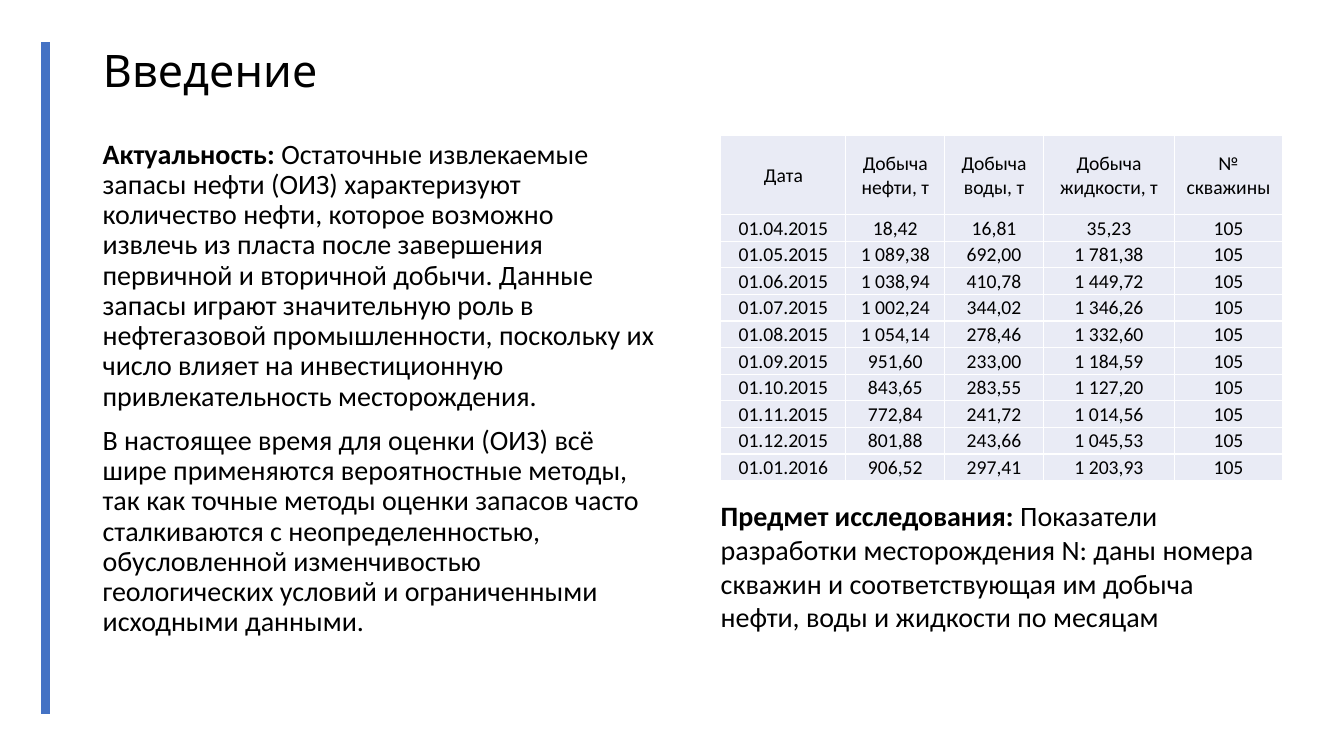
import pptx
import pptx.dml.color
import pptx.enum.shapes
import pptx.enum.text
import pptx.oxml
import pptx.oxml.ns
import pptx.util

SCALE = 9144
COLORS = {"text": "000000", "accent": "4472C4", "cell": "E9EBF5", "border": "FFFFFF"}
BODY_FONT = {"name": "Calibri", "size": pptx.util.Pt(20)}
TITLE_FONT = {"name": "League Spartan", "size": pptx.util.Pt(32), "bold": False}
CELL_FONT = {"name": "Calibri", "size": pptx.util.Pt(14), "bold": False}
CELL_FORMAT = {
    "margin_left": SCALE,
    "margin_right": SCALE,
    "margin_top": SCALE,
    "margin_bottom": 0,
    "vertical_anchor": pptx.enum.text.MSO_ANCHOR.MIDDLE,
}
RELEVANCE_SPACING = {"line_spacing": 0.9, "space_before": pptx.util.Pt(10)}
SUBJECT_SPACING = {"space_before": pptx.util.Pt(6), "space_after": pptx.util.Pt(6)}

RELEVANCE = [
    (
        "Актуальность: ",
        "Остаточные извлекаемые запасы нефти (ОИЗ) характеризуют количество нефти, "
        "которое возможно извлечь из пласта после завершения первичной и вторичной добычи. "
        "Данные запасы играют значительную роль в нефтегазовой промышленности, поскольку "
        "их число влияет на инвестиционную привлекательность месторождения.",
    ),
    (
        "",
        "В настоящее время для оценки (ОИЗ) всё шире применяются вероятностные методы, "
        "так как точные методы оценки запасов часто сталкиваются с неопределенностью, "
        "обусловленной изменчивостью геологических условий и ограниченными исходными данными.",
    ),
]
SUBJECT = [
    (
        "Предмет исследования: ",
        "Показатели разработки месторождения N: даны номера скважин и соответствующая "
        "им добыча нефти, воды и жидкости по месяцам",
    )
]
HEADERS = ["Дата", "Добыча нефти, т", "Добыча воды, т", "Добыча жидкости, т", "№ скважины"]
WELL = "105"
PRODUCTION = [
    ("01.04.2015", "18,42", "16,81", "35,23"),
    ("01.05.2015", "1 089,38", "692,00", "1 781,38"),
    ("01.06.2015", "1 038,94", "410,78", "1 449,72"),
    ("01.07.2015", "1 002,24", "344,02", "1 346,26"),
    ("01.08.2015", "1 054,14", "278,46", "1 332,60"),
    ("01.09.2015", "951,60", "233,00", "1 184,59"),
    ("01.10.2015", "843,65", "283,55", "1 127,20"),
    ("01.11.2015", "772,84", "241,72", "1 014,56"),
    ("01.12.2015", "801,88", "243,66", "1 045,53"),
    ("01.01.2016", "906,52", "297,41", "1 203,93"),
]
COLUMN_WIDTHS = [124, 98, 98, 130, 107]
HEADER_HEIGHT = 79


def px(length):
    return round(length * SCALE)


def rgb(name):
    return pptx.dml.color.RGBColor.from_string(COLORS[name])


def apply(target, values):
    for name, value in values.items():
        setattr(target, name, value)


def add_run(paragraph, text, font):
    run = paragraph.add_run()
    run.text = text
    apply(run.font, font)
    run.font.color.rgb = rgb("text")


def place_title(slide, box, text):
    title = slide.shapes.title
    apply(title, dict(zip(("left", "top", "width", "height"), map(px, box))))
    apply(title.text_frame, {
        "word_wrap": True,
        "auto_size": pptx.enum.text.MSO_AUTO_SIZE.NONE,
        "vertical_anchor": pptx.enum.text.MSO_ANCHOR.MIDDLE,
    })
    paragraph = title.text_frame.paragraphs[0]
    apply(paragraph, {"alignment": pptx.enum.text.PP_ALIGN.LEFT, "line_spacing": 0.9})
    add_run(paragraph, text, TITLE_FONT)


def add_accent_line(slide, box):
    left, top, width, height = box
    center = px(left + width / 2)
    line = slide.shapes.add_connector(
        pptx.enum.shapes.MSO_CONNECTOR.STRAIGHT, center, px(top), center, px(top + height)
    )
    line.line.color.rgb = rgb("accent")
    line.line.width = pptx.util.Pt(6)
    pptx.oxml.ns.qn("a:effectLst")
    line._element.spPr.append(
        line._element.spPr.makeelement(pptx.oxml.ns.qn("a:effectLst"), {})
    )


def add_body(slide, box, paragraphs, spacing):
    frame = slide.shapes.add_textbox(*map(px, box)).text_frame
    frame.word_wrap = True
    for index, (lead, text) in enumerate(paragraphs):
        paragraph = frame.add_paragraph() if index else frame.paragraphs[0]
        apply(paragraph, spacing)
        if lead:
            add_run(paragraph, lead, {**BODY_FONT, "bold": True})
        add_run(paragraph, text, {**BODY_FONT, "bold": False})


def add_borders(cell):
    properties = cell._tc.get_or_add_tcPr()
    for side in ("lnL", "lnR", "lnT", "lnB"):
        properties.append(pptx.oxml.parse_xml(
            f'<a:{side} {pptx.oxml.ns.nsdecls("a")} w="{pptx.util.Pt(1)}"><a:solidFill>'
            f'<a:srgbClr val="{COLORS["border"]}"/></a:solidFill></a:{side}>'
        ))


def add_production_table(slide, box):
    rows = [HEADERS] + [[*record, WELL] for record in PRODUCTION]
    table = slide.shapes.add_table(len(rows), len(HEADERS), *map(px, box)).table
    apply(table, {"first_row": False, "horz_banding": False})
    for column, width in zip(table.columns, COLUMN_WIDTHS):
        column.width = px(width)
    for index, row in enumerate(table.rows):
        row.height = px((box[3] - HEADER_HEIGHT) / len(PRODUCTION) if index else HEADER_HEIGHT)
        for cell, text in zip(row.cells, rows[index]):
            apply(cell, CELL_FORMAT)
            add_borders(cell)
            cell.fill.solid()
            cell.fill.fore_color.rgb = rgb("cell")
            paragraph = cell.text_frame.paragraphs[0]
            paragraph.alignment = pptx.enum.text.PP_ALIGN.CENTER
            add_run(paragraph, text, CELL_FONT)


def build_introduction(presentation):
    slide = presentation.slides.add_slide(presentation.slide_layouts[5])
    place_title(slide, (92, 40, 1150, 65), "Введение")
    add_body(slide, (705, 490, 567, 151), SUBJECT, SUBJECT_SPACING)
    add_accent_line(slide, (41, 42, 8, 666))
    add_body(slide, (92, 134, 567, 507), RELEVANCE, RELEVANCE_SPACING)
    add_production_table(slide, (715, 134, 557, 343))


def main():
    presentation = pptx.Presentation()
    apply(presentation, {"slide_width": px(1333), "slide_height": px(750)})
    build_introduction(presentation)
    presentation.save("out.pptx")


if __name__ == "__main__":
    main()
